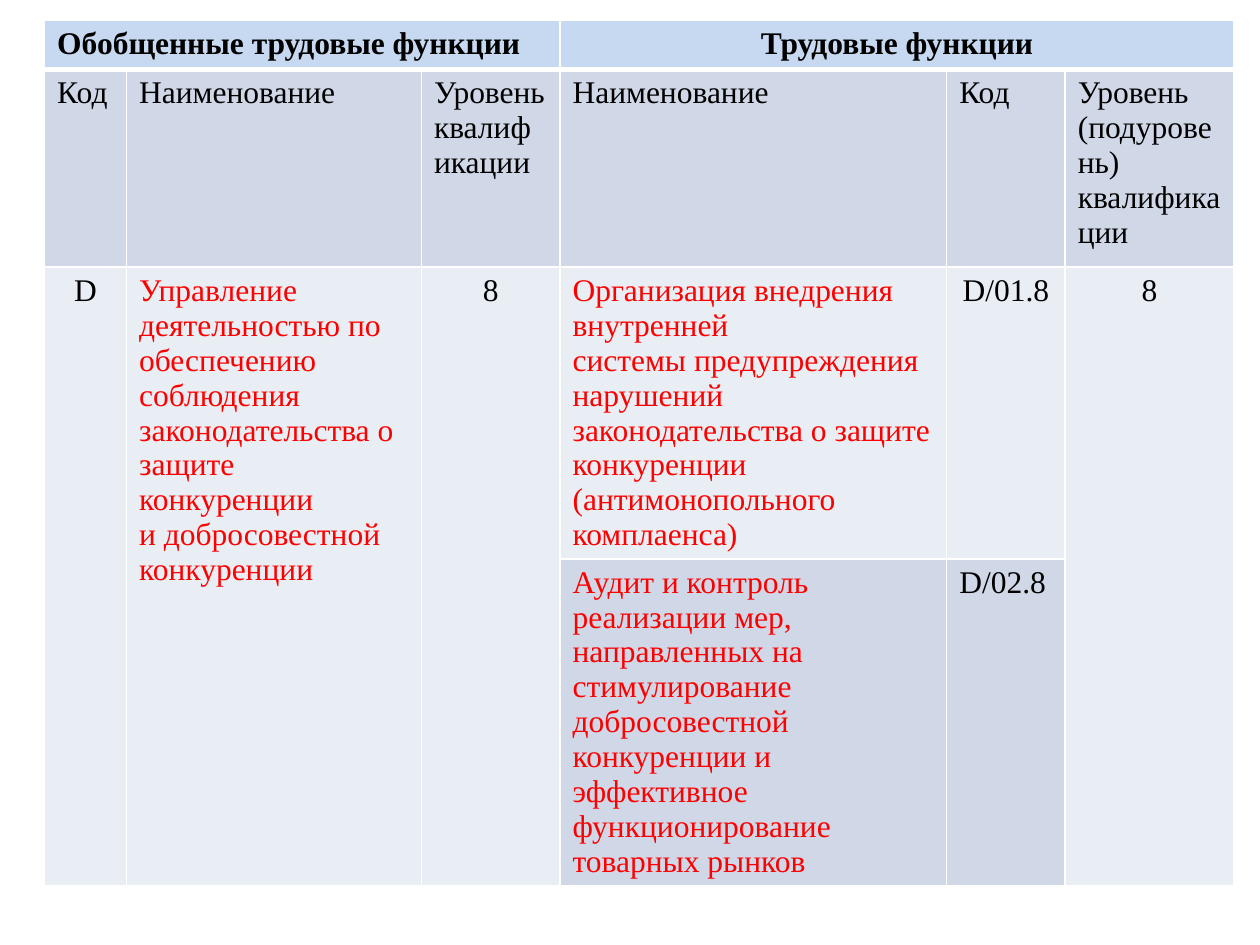
import dataclasses

import lxml.etree
import pptx
import pptx.dml.color
import pptx.enum.text
import pptx.oxml.ns
import pptx.util

Pt = pptx.util.Pt
CENTER = pptx.enum.text.PP_ALIGN.CENTER
LEFT = pptx.enum.text.PP_ALIGN.LEFT


@dataclasses.dataclass
class Theme:
    font: str = "Times New Roman"
    size: int = 18
    ink: str = "000000"
    red: str = "FF0000"
    head: str = "C6D9F1"
    dark: str = "D0D8E8"
    light: str = "E9EDF4"
    rule: str = "FFFFFF"
    thin: int = 1
    thick: int = 3


class Board:
    def __init__(self, theme, slide):
        self.theme = theme
        self.slide = slide

    def table(self, left, top, widths, heights):
        shape = self.slide.shapes.add_table(
            len(heights), len(widths), Pt(left), Pt(top),
            Pt(sum(widths)), Pt(sum(heights)))
        grid = shape.table
        for col, width in zip(grid.columns, widths):
            col.width = Pt(width)
        for row, height in zip(grid.rows, heights):
            row.height = Pt(height)
        return grid

    def border(self, cell, row):
        theme = self.theme
        top = theme.thick if row == 1 else theme.thin
        base = theme.thick if row == 0 else theme.thin
        sides = {"lnL": theme.thin, "lnR": theme.thin, "lnT": top, "lnB": base}
        props = cell._tc.get_or_add_tcPr()
        name = pptx.oxml.ns.qn
        for spot, (side, width) in enumerate(sides.items()):
            line = lxml.etree.Element(name("a:" + side), w=str(Pt(width)))
            fill = lxml.etree.SubElement(line, name("a:solidFill"))
            lxml.etree.SubElement(fill, name("a:srgbClr"), val=theme.rule)
            props.insert(spot, line)

    def paint(self, cell, row, color):
        cell.fill.solid()
        cell.fill.fore_color.rgb = pptx.dml.color.RGBColor.from_string(color)
        self.border(cell, row)

    def text(self, cell, lines, color, align=LEFT, bold=False):
        frame = cell.text_frame
        for spot, line in enumerate(lines):
            para = frame.add_paragraph() if spot else frame.paragraphs[0]
            para.alignment = align
            run = para.add_run()
            run.text = line
            run.font.name = self.theme.font
            run.font.size = Pt(self.theme.size)
            run.font.bold = bold
            run.font.color.rgb = pptx.dml.color.RGBColor.from_string(color)


def main():
    deck = pptx.Presentation()
    deck.slide_width, deck.slide_height = Pt(720), Pt(540)
    theme = Theme()
    board = Board(theme, deck.slides.add_slide(deck.slide_layouts[6]))
    grid = board.table(25.5, 11.7, [46.8, 168.5, 79.2, 221, 67.7, 96.5],
                       [28, 113, 166, 186])

    fills = [theme.head, theme.dark, theme.light, theme.dark]
    spans = [(0, 0, 0, 2), (0, 3, 0, 5)]
    spans += [(2, col, 3, col) for col in (0, 1, 2, 5)]
    for row, color in enumerate(fills):
        for col in range(len(grid.columns)):
            joined = row == 3 and col not in (3, 4)
            board.paint(grid.cell(row, col), row, theme.light if joined else color)
    for top, left, base, right in spans:
        grid.cell(top, left).merge(grid.cell(base, right))

    board.text(grid.cell(0, 0), ["Обобщенные трудовые функции"], theme.ink, bold=True)
    board.text(grid.cell(0, 3), ["Трудовые функции"], theme.ink, CENTER, True)

    heads = ["Код", "Наименование", "Уровень квалификации",
             "Наименование", "Код", "Уровень (подуровень) квалификации"]
    for col, head in enumerate(heads):
        board.text(grid.cell(1, col), [head], theme.ink)

    for col, code in {0: "D", 2: "8", 4: "D/01.8", 5: "8"}.items():
        board.text(grid.cell(2, col), [code], theme.ink, CENTER)
    board.text(grid.cell(3, 4), ["D/02.8"], theme.ink)

    tasks = {
        (2, 1): ["Управление", "деятельностью по", "обеспечению", "соблюдения",
                 "законодательства о", "защите конкуренции",
                 "и добросовестной", "конкуренции"],
        (2, 3): ["Организация внедрения внутренней",
                 "системы предупреждения нарушений",
                 "законодательства о защите",
                 "конкуренции (антимонопольного", "комплаенса)"],
        (3, 3): ["Аудит и контроль реализации мер,",
                 "направленных на стимулирование",
                 "добросовестной конкуренции и",
                 "эффективное функционирование", "товарных рынков"],
    }
    for (row, col), lines in tasks.items():
        board.text(grid.cell(row, col), lines, theme.red)

    deck.save("out.pptx")


if __name__ == "__main__":
    main()
